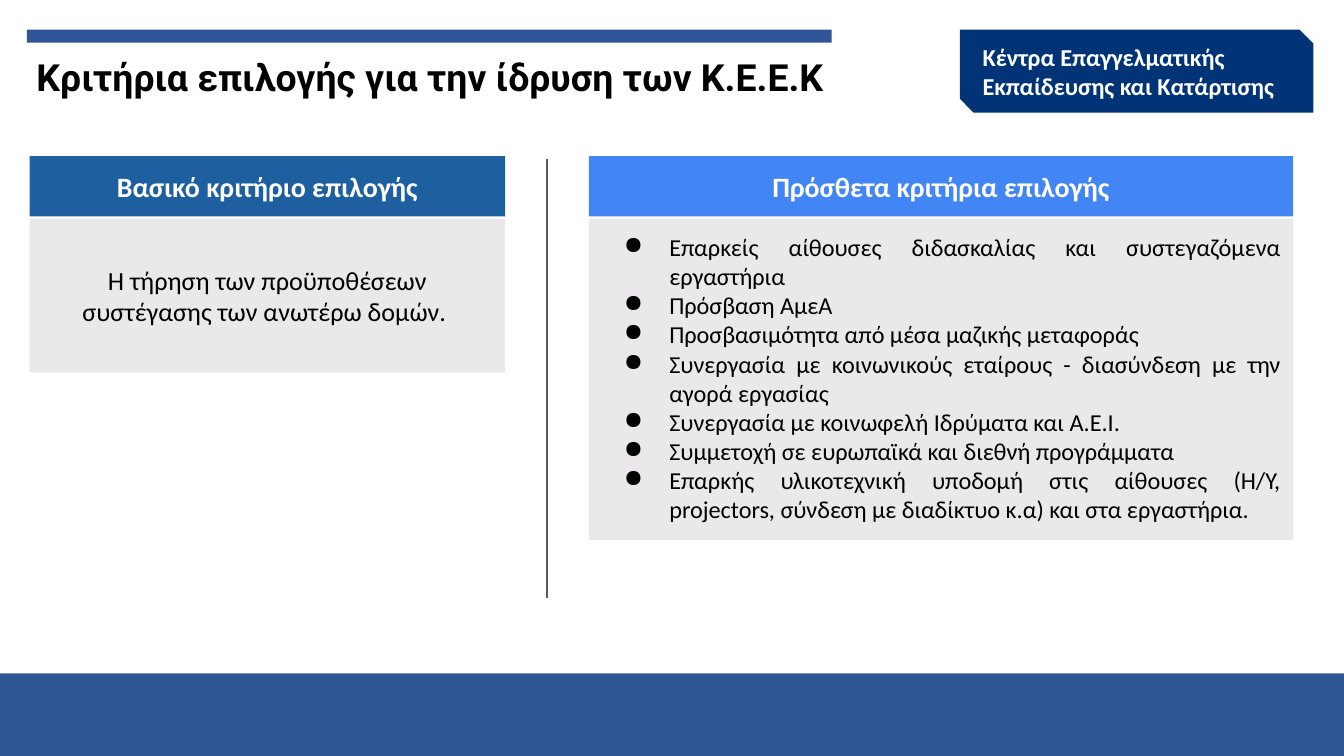
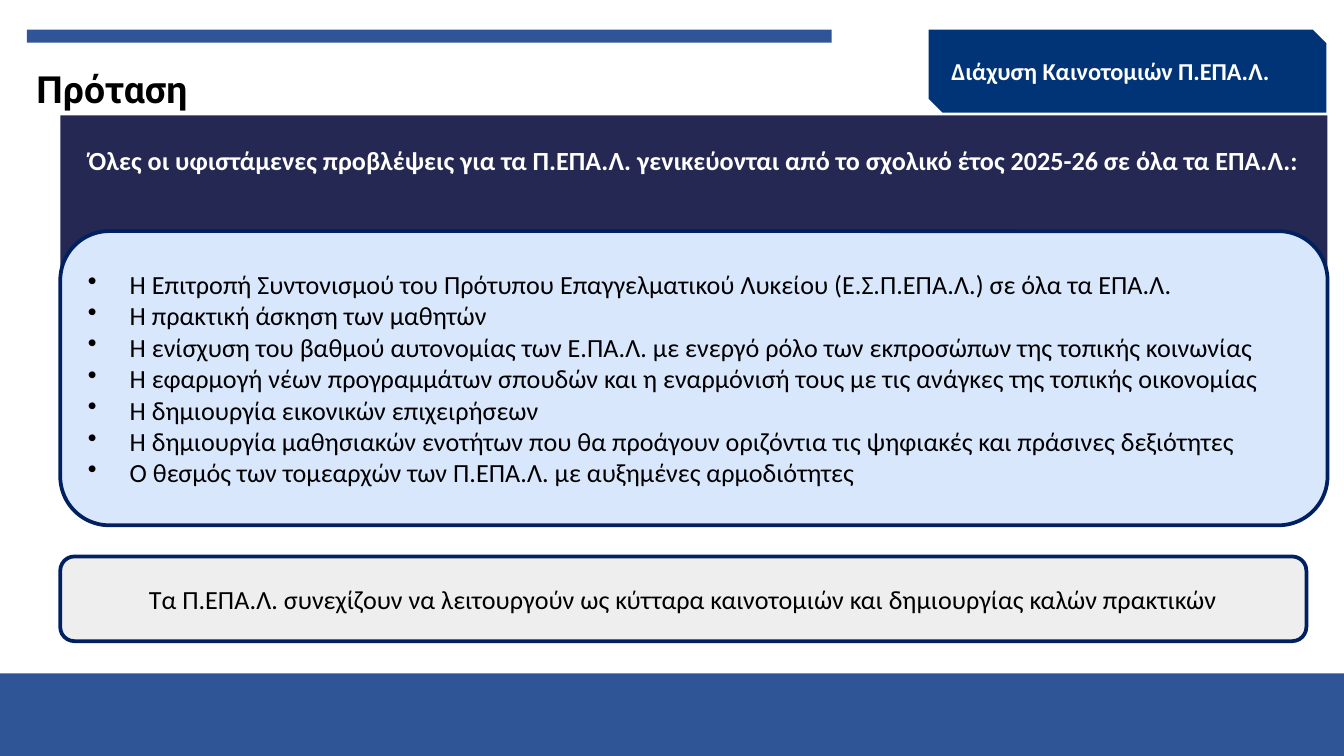
from lxml.etree import SubElement
from pptx import Presentation
from pptx.dml.color import RGBColor
from pptx.enum.shapes import MSO_CONNECTOR, MSO_SHAPE
from pptx.enum.text import MSO_ANCHOR, PP_ALIGN
from pptx.oxml.ns import qn
from pptx.util import Cm, Pt

BAND_BLUE = RGBColor(0x2F, 0x55, 0x97)
TAG_NAVY = RGBColor(0x01, 0x34, 0x76)
BASIC_BLUE = RGBColor(0x1E, 0x5F, 0x9F)
EXTRA_BLUE = RGBColor(0x42, 0x85, 0xF4)
PANEL_GREY = RGBColor(0xEA, 0xE8, 0xEB)
PROPOSAL_INDIGO = RGBColor(0x24, 0x28, 0x52)
PROVISIONS_BLUE = RGBColor(0xD9, 0xE7, 0xFD)
CLOSING_GREY = RGBColor(0xEE, 0xEE, 0xEE)
OUTLINE_NAVY = RGBColor(0x00, 0x20, 0x60)
DIVIDER_GREY = RGBColor(0x59, 0x59, 0x59)
WHITE = RGBColor(0xFF, 0xFF, 0xFF)
BLACK = RGBColor(0x00, 0x00, 0x00)

CRITERIA = {
    "title": "Κριτήρια επιλογής για την ίδρυση των Κ.Ε.Ε.Κ",
    "title_top": 0.79,
    "tag": "Κέντρα Επαγγελματικής Εκπαίδευσης και Κατάρτισης",
    "tag_span": (18.14, 6.68),
}
BASIC = {
    "heading": "Βασικό κριτήριο επιλογής",
    "color": BASIC_BLUE,
    "span": (0.56, 8.99),
    "height": 2.9,
    "lines": ["Η τήρηση των προϋποθέσεων συστέγασης των ανωτέρω δομών. "],
    "format": {"size": 14, "align": PP_ALIGN.CENTER, "anchor": MSO_ANCHOR.MIDDLE},
}
EXTRA = {
    "heading": "Πρόσθετα κριτήρια επιλογής",
    "color": EXTRA_BLUE,
    "span": (11.13, 13.31),
    "height": 6.07,
    "lines": [
        "Επαρκείς αίθουσες διδασκαλίας και συστεγαζόμενα εργαστήρια",
        "Πρόσβαση ΑμεΑ",
        "Προσβασιμότητα από μέσα μαζικής μεταφοράς",
        "Συνεργασία με κοινωνικούς εταίρους - διασύνδεση με την αγορά εργασίας",
        "Συνεργασία με κοινωφελή Ιδρύματα και Α.Ε.Ι.",
        "Συμμετοχή σε ευρωπαϊκά και διεθνή προγράμματα",
        "Επαρκής υλικοτεχνική υποδομή στις αίθουσες (Η/Υ, projectors, "
        "σύνδεση με διαδίκτυο κ.α) και στα εργαστήρια.",
    ],
    "format": {"size": 13, "align": PP_ALIGN.JUSTIFY, "bullet": "●",
               "indent": (1.27, 0.86)},
}

PROPOSAL = {
    "title": "Πρόταση",
    "title_top": 1.02,
    "tag": "Διάχυση Καινοτομιών Π.ΕΠΑ.Λ.",
    "tag_span": (17.55, 7.52),
}
PROPOSAL_LEAD = ("Όλες οι υφιστάμενες προβλέψεις για τα Π.ΕΠΑ.Λ. γενικεύονται "
                 "από το σχολικό έτος 2025-26 σε όλα τα ΕΠΑ.Λ.:")
PROVISIONS = [
    "Η Επιτροπή Συντονισμού του Πρότυπου Επαγγελματικού Λυκείου "
    "(Ε.Σ.Π.ΕΠΑ.Λ.) σε όλα τα ΕΠΑ.Λ.",
    "Η πρακτική άσκηση των μαθητών",
    "Η ενίσχυση του βαθμού αυτονομίας των Ε.ΠΑ.Λ. με ενεργό ρόλο των "
    "εκπροσώπων της τοπικής κοινωνίας",
    "Η εφαρμογή νέων προγραμμάτων σπουδών και η εναρμόνισή τους με τις "
    "ανάγκες της τοπικής οικονομίας",
    "Η δημιουργία εικονικών επιχειρήσεων",
    "Η δημιουργία μαθησιακών ενοτήτων που θα προάγουν οριζόντια τις "
    "ψηφιακές και πράσινες δεξιότητες",
    "Ο θεσμός των τομεαρχών των Π.ΕΠΑ.Λ. με αυξημένες αρμοδιότητες",
]
CLOSING = ("Τα Π.ΕΠΑ.Λ. συνεχίζουν να λειτουργούν ως κύτταρα καινοτομιών "
           "και δημιουργίας καλών πρακτικών")

SLIDE_WIDTH, SLIDE_HEIGHT = 25.4, 14.29
FOOTER_TOP = 12.73
HEADING_TOP, HEADING_HEIGHT, PANEL_TOP = 2.95, 1.14, 4.14
DIVIDER_X, DIVIDER_TOP, DIVIDER_BOTTOM = 10.34, 3.0, 11.3
PROPOSAL_LEFT, PROPOSAL_WIDTH = 1.14, 23.95


def write(shape, lines, *, size, color=BLACK, font="Calibri", bold=False,
          align=PP_ALIGN.LEFT, anchor=MSO_ANCHOR.TOP, inset=(0.25, 0.25),
          spacing=1.0, bullet=None, indent=(0, 0)):
    frame = shape.text_frame
    frame.word_wrap = True
    frame.vertical_anchor = anchor
    frame.margin_left = frame.margin_right = Cm(inset[0])
    frame.margin_top = frame.margin_bottom = Cm(inset[1])
    for index, line in enumerate(lines):
        paragraph = frame.paragraphs[0] if index == 0 else frame.add_paragraph()
        if bullet:
            properties = paragraph._p.get_or_add_pPr()
            properties.set("marL", str(Cm(indent[0])))
            properties.set("indent", str(-Cm(indent[1])))
            tint = SubElement(properties, qn("a:buClr"))
            SubElement(tint, qn("a:srgbClr"), val=str(color))
            SubElement(properties, qn("a:buChar"), char=bullet)
        paragraph.alignment = align
        paragraph.line_spacing = spacing
        run = paragraph.add_run()
        run.text = line
        run.font.name = font
        run.font.size = Pt(size)
        run.font.bold = bold
        run.font.color.rgb = color


def add_block(slide, left, top, width, height, fill,
              kind=MSO_SHAPE.RECTANGLE, outline=None):
    block = slide.shapes.add_shape(kind, Cm(left), Cm(top), Cm(width), Cm(height))
    block.shadow.inherit = False
    block.fill.solid()
    block.fill.fore_color.rgb = fill
    if outline is None:
        block.line.fill.background()
    else:
        block.line.color.rgb = outline
        block.line.width = Pt(2)
    return block


def add_themed_slide(deck, theme):
    slide = deck.slides.add_slide(deck.slide_layouts[6])
    add_block(slide, 0, FOOTER_TOP, SLIDE_WIDTH, SLIDE_HEIGHT - FOOTER_TOP, BAND_BLUE)
    title = slide.shapes.add_textbox(Cm(0.51), Cm(theme["title_top"]),
                                     Cm(17.93), Cm(1.14))
    write(title, [theme["title"]], size=20, font="Roboto", bold=True,
          inset=(0.18, 0.1), spacing=1.15)
    add_block(slide, 0.51, 0.56, 15.21, 0.25, BAND_BLUE)
    left, width = theme["tag_span"]
    tag = add_block(slide, left, 0.56, width, 1.57, TAG_NAVY,
                    MSO_SHAPE.SNIP_2_DIAG_RECTANGLE)
    write(tag, [theme["tag"]], size=13, color=WHITE, bold=True,
          anchor=MSO_ANCHOR.MIDDLE, inset=(0.3, 0.05))
    return slide


def add_criteria_panel(slide, panel):
    left, width = panel["span"]
    body = add_block(slide, left, PANEL_TOP, width, panel["height"], PANEL_GREY)
    write(body, panel["lines"], **panel["format"])
    heading = add_block(slide, left, HEADING_TOP, width, HEADING_HEIGHT, panel["color"])
    write(heading, [panel["heading"]], size=15, color=WHITE, bold=True,
          align=PP_ALIGN.CENTER, anchor=MSO_ANCHOR.MIDDLE)


def build_criteria(deck):
    slide = add_themed_slide(deck, CRITERIA)
    add_criteria_panel(slide, BASIC)
    divider = slide.shapes.add_connector(
        MSO_CONNECTOR.STRAIGHT, Cm(DIVIDER_X), Cm(DIVIDER_BOTTOM),
        Cm(DIVIDER_X), Cm(DIVIDER_TOP))
    divider.line.color.rgb = DIVIDER_GREY
    divider.line.width = Pt(0.75)
    SubElement(divider._element.spPr, qn("a:effectLst"))
    add_criteria_panel(slide, EXTRA)


def build_proposal(deck):
    slide = add_themed_slide(deck, PROPOSAL)
    lead = add_block(slide, PROPOSAL_LEFT, 2.18, PROPOSAL_WIDTH, 3.18, PROPOSAL_INDIGO)
    write(lead, [PROPOSAL_LEAD], size=14, color=WHITE, bold=True,
          align=PP_ALIGN.CENTER, spacing=1.5)
    provisions = add_block(slide, PROPOSAL_LEFT, 4.37, PROPOSAL_WIDTH, 5.56,
                           PROVISIONS_BLUE, MSO_SHAPE.ROUNDED_RECTANGLE, OUTLINE_NAVY)
    write(provisions, PROVISIONS, size=14, anchor=MSO_ANCHOR.MIDDLE,
          inset=(0.25, 0.13), bullet="•", indent=(0.79, 0.79))
    closing = add_block(slide, PROPOSAL_LEFT, 10.52, 23.55, 1.6,
                        CLOSING_GREY, MSO_SHAPE.ROUNDED_RECTANGLE, OUTLINE_NAVY)
    write(closing, [CLOSING], size=14, align=PP_ALIGN.CENTER,
          anchor=MSO_ANCHOR.MIDDLE, inset=(0.25, 0.13))


def main():
    deck = Presentation()
    deck.slide_width = Cm(SLIDE_WIDTH)
    deck.slide_height = Cm(SLIDE_HEIGHT)
    build_criteria(deck)
    build_proposal(deck)
    deck.save("out.pptx")


if __name__ == "__main__":
    main()
